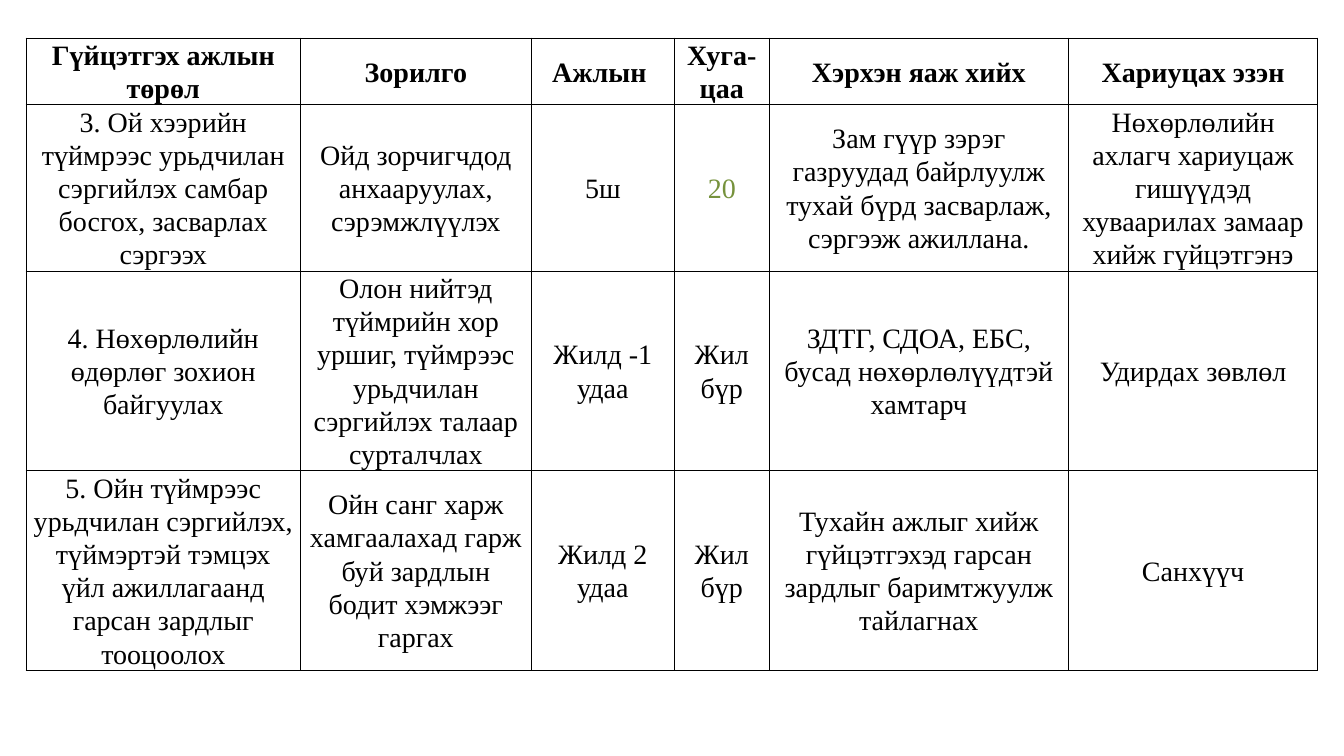
import pptx
import pptx.util
import pptx.dml.color
import pptx.enum.text
import pptx.oxml.ns
import lxml.etree

COLORS = {"ink": "000000", "green": "76923C"}
FONT = "Times New Roman"
LINE_HEIGHT = 0.33
COLUMN_WIDTHS = [2.72, 2.29, 1.42, 0.94, 2.97, 2.47]
ROW_LINES = [2, 5, 6, 6]

WORK_PLAN = [
    ["Гүйцэтгэх ажлын төрөл", "Зорилго", "Ажлын ", "Хуга-цаа",
     "Хэрхэн яаж хийх", "Хариуцах эзэн"],
    ["3. Ой хээрийн түймрээс урьдчилан сэргийлэх самбар босгох, засварлах сэргээх",
     "Ойд зорчигчдод анхааруулах, сэрэмжлүүлэх", "5ш", "20",
     "Зам гүүр зэрэг газруудад байрлуулж тухай бүрд засварлаж, сэргээж ажиллана.",
     "Нөхөрлөлийн ахлагч хариуцаж гишүүдэд хуваарилах замаар хийж гүйцэтгэнэ"],
    ["4. Нөхөрлөлийн өдөрлөг зохион байгуулах",
     "Олон нийтэд түймрийн хор уршиг, түймрээс урьдчилан сэргийлэх талаар сурталчлах",
     "Жилд -1 удаа", "Жил бүр",
     "ЗДТГ, СДОА, ЕБС, бусад нөхөрлөлүүдтэй хамтарч", "Удирдах зөвлөл"],
    ["5. Ойн түймрээс урьдчилан сэргийлэх, түймэртэй тэмцэх үйл ажиллагаанд гарсан зардлыг тооцоолох",
     "Ойн санг харж хамгаалахад гарж буй зардлын бодит хэмжээг гаргах",
     "Жилд 2 удаа", "Жил бүр",
     "Тухайн ажлыг хийж гүйцэтгэхэд гарсан зардлыг баримтжуулж тайлагнах", "Санхүүч"],
]


def write_cell(cell, text, color="ink", bold=False, size=20):
    cell.vertical_anchor = pptx.enum.text.MSO_ANCHOR.MIDDLE
    cell.margin_left = cell.margin_right = pptx.util.Inches(0.07)
    cell.margin_top = cell.margin_bottom = 0
    para = cell.text_frame.paragraphs[0]
    para.alignment = pptx.enum.text.PP_ALIGN.CENTER
    para.line_spacing = 1.07
    span = para.add_run()
    span.text = text
    span.font.name = FONT
    span.font.size = pptx.util.Pt(size)
    span.font.bold = bold
    span.font.color.rgb = pptx.dml.color.RGBColor.from_string(COLORS[color])


def draw_borders(cell, color="ink", width=1):
    properties = cell._tc.get_or_add_tcPr()
    qn = pptx.oxml.ns.qn
    for side in ("a:lnL", "a:lnR", "a:lnT", "a:lnB"):
        line = lxml.etree.SubElement(properties, qn(side), w=str(pptx.util.Pt(width)))
        fill = lxml.etree.SubElement(line, qn("a:solidFill"))
        lxml.etree.SubElement(fill, qn("a:srgbClr"), val=COLORS[color])


# Slide
deck = pptx.Presentation()
deck.slide_width = pptx.util.Inches(13.33)
deck.slide_height = pptx.util.Inches(7.5)
page = deck.slides.add_slide(deck.slide_layouts[6])

# Table grid: each row is as tall as its longest cell
frame = page.shapes.add_table(
    len(ROW_LINES), len(COLUMN_WIDTHS),
    pptx.util.Inches(0.26), pptx.util.Inches(0.38),
    pptx.util.Inches(sum(COLUMN_WIDTHS)),
    pptx.util.Inches(sum(ROW_LINES) * LINE_HEIGHT))
table = frame.table
table.horz_banding = False
for column, width in zip(table.columns, COLUMN_WIDTHS):
    column.width = pptx.util.Inches(width)
for row, lines in zip(table.rows, ROW_LINES):
    row.height = pptx.util.Inches(lines * LINE_HEIGHT)

# Cells: borders come before the fill in the cell properties
for row_index, texts in enumerate(WORK_PLAN):
    for column_index, text in enumerate(texts):
        cell = table.cell(row_index, column_index)
        write_cell(cell, text, bold=row_index == 0,
                   color="green" if text == "20" else "ink")
        draw_borders(cell)
        cell.fill.background()

deck.save("out.pptx")
